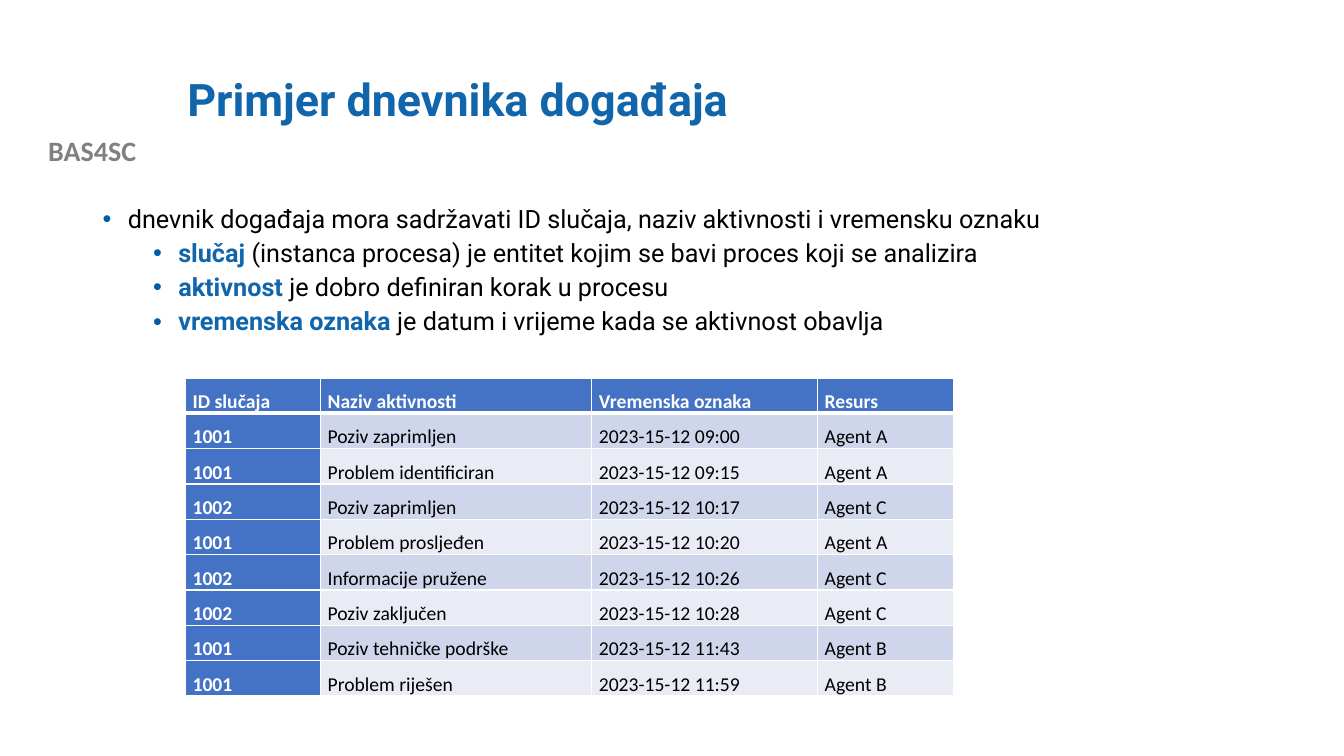
from dataclasses import dataclass

from lxml.etree import SubElement
from pptx import Presentation
from pptx.dml.color import RGBColor
from pptx.enum.text import MSO_ANCHOR, PP_ALIGN
from pptx.oxml.ns import qn
from pptx.util import Inches, Pt


@dataclass(frozen=True)
class Theme:
    blue: str = "1065AB"
    bullet: str = "015BA6"
    grey: str = "808080"
    black: str = "000000"
    white: str = "FFFFFF"
    header: str = "4472C4"
    bands: tuple = ("CFD5EA", "E9EBF5")
    heading_font: str = "Roboto"
    table_font: str = "Calibri"
    title_size: int = 32
    label_size: int = 20
    body_size: int = 18
    table_size: int = 14


T = Theme()


def write(p, runs, *, size, font, align=PP_ALIGN.LEFT, spacing=None,
          before=0, after=0, bullet_indent=None):
    """Fill a paragraph with (text, colour, bold) runs."""
    p.alignment = align
    p.space_before, p.space_after = Pt(before), Pt(after)
    if spacing:
        p.line_spacing = spacing
    if bullet_indent is not None:
        pPr = p._p.get_or_add_pPr()
        pPr.set("marL", str(Inches(bullet_indent)))
        pPr.set("indent", str(Inches(-0.25)))
        SubElement(SubElement(pPr, qn("a:buClr")), qn("a:srgbClr"), val=T.bullet)
        SubElement(pPr, qn("a:buFont"), typeface="Arial")
        SubElement(pPr, qn("a:buChar"), char="•")
    for text, color, bold in runs:
        r = p.add_run()
        r.text = text
        r.font.size, r.font.name, r.font.bold = Pt(size), font, bold
        r.font.color.rgb = RGBColor.from_string(color)


def add_box(left, top, width, height, anchor=MSO_ANCHOR.TOP):
    tf = s.shapes.add_textbox(Inches(left), Inches(top),
                              Inches(width), Inches(height)).text_frame
    tf.word_wrap = True
    tf.vertical_anchor = anchor
    return tf


prs = Presentation()
prs.slide_width, prs.slide_height = Inches(13.33), Inches(7.5)
s = prs.slides.add_slide(prs.slide_layouts[6])

# Project label and title
tf = add_box(0, 1.28, 1.83, 0.44)
write(tf.paragraphs[0], [("BAS4SC", T.grey, True)], size=T.label_size,
      font=T.table_font, align=PP_ALIGN.CENTER)
tf = add_box(1.76, 0.4, 10.66, 1.22, MSO_ANCHOR.MIDDLE)
write(tf.paragraphs[0], [("Primjer dnevnika događaja", T.blue, True)],
      size=T.title_size, font=T.heading_font, spacing=0.9)

# Requirements of an event log
tf = add_box(0.92, 2, 11.5, 2.51)
write(tf.paragraphs[0],
      [("dnevnik događaja mora sadržavati ID slučaja, naziv aktivnosti i vremensku oznaku",
        T.black, False)],
      size=T.body_size, font=T.heading_font, spacing=0.9, bullet_indent=0.25)
definitions = [
    ("slučaj", " (instanca procesa) je entitet kojim se bavi proces koji se analizira"),
    ("aktivnost", " je dobro definiran korak u procesu"),
    ("vremenska oznaka", " je datum i vrijeme kada se aktivnost obavlja"),
]
for term, meaning in definitions:
    p = tf.add_paragraph()
    p.level = 1
    write(p, [(term, T.blue, True), (meaning, T.black, False)], size=T.body_size,
          font=T.heading_font, spacing=0.9, before=5, bullet_indent=0.75)

# Event log
events = [
    ("ID slučaja", "Naziv aktivnosti", "Vremenska oznaka", "Resurs"),
    ("1001", "Poziv zaprimljen", "2023-15-12 09:00", "Agent A"),
    ("1001", "Problem identificiran", "2023-15-12 09:15", "Agent A"),
    ("1002", "Poziv zaprimljen", "2023-15-12 10:17", "Agent C"),
    ("1001", "Problem prosljeđen", "2023-15-12 10:20", "Agent A"),
    ("1002", "Informacije pružene", "2023-15-12 10:26", "Agent C"),
    ("1002", "Poziv zaključen", "2023-15-12 10:28", "Agent C"),
    ("1001", "Poziv tehničke podrške", "2023-15-12 11:43", "Agent B"),
    ("1001", "Problem riješen", "2023-15-12 11:59", "Agent B"),
]
widths = [1.34, 2.69, 2.24, 1.35]
row_height = 0.35
table = s.shapes.add_table(len(events), len(widths), Inches(1.84), Inches(3.75),
                           Inches(sum(widths)), Inches(row_height * len(events))).table
table.first_col = True
for column, width in zip(table.columns, widths):
    column.width = Inches(width)

for i, event in enumerate(events):
    table.rows[i].height = Inches(row_height)
    for j, value in enumerate(event):
        cell = table.cell(i, j)
        cell.margin_left = cell.margin_right = Inches(0.07)
        cell.margin_top = cell.margin_bottom = 0
        cell.vertical_anchor = MSO_ANCHOR.TOP if i else MSO_ANCHOR.MIDDLE

        tcPr = cell._tc.get_or_add_tcPr()
        for side in ("lnL", "lnR", "lnT", "lnB"):
            under_header = (i, side) in ((0, "lnB"), (1, "lnT"))
            ln = SubElement(tcPr, qn(f"a:{side}"), w=str(Pt(3 if under_header else 1)))
            SubElement(SubElement(ln, qn("a:solidFill")), qn("a:srgbClr"), val=T.white)

        heading = i == 0 or j == 0
        cell.fill.solid()
        cell.fill.fore_color.rgb = RGBColor.from_string(
            T.header if heading else T.bands[(i - 1) % 2])
        write(cell.text_frame.paragraphs[0],
              [(value, T.white if heading else T.black, heading)],
              size=T.table_size, font=T.table_font, spacing=1.5, after=6,
              align=PP_ALIGN.JUSTIFY if i else PP_ALIGN.LEFT)

prs.save("out.pptx")
